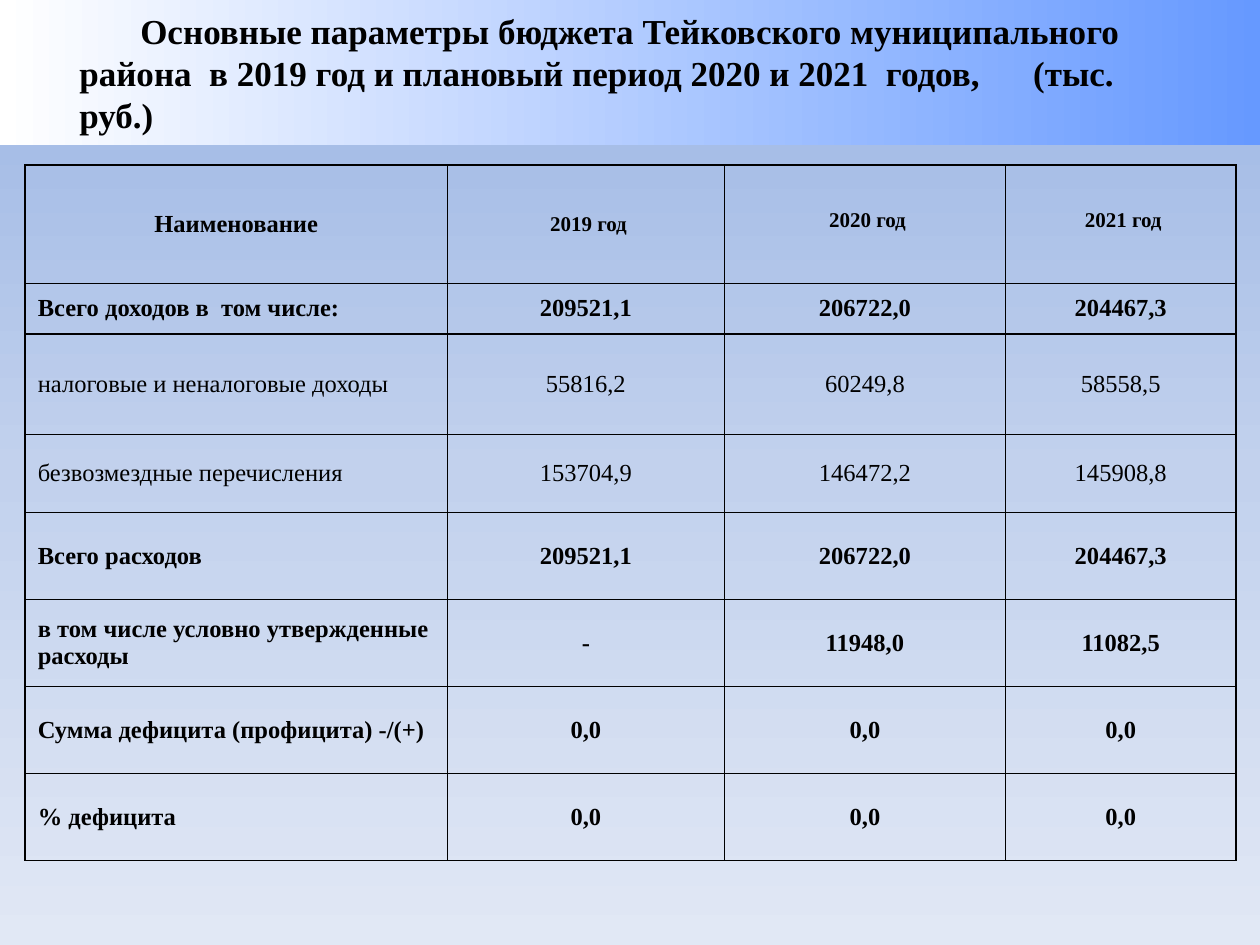
from copy import deepcopy

from lxml.etree import SubElement
from pptx import Presentation
from pptx.dml.color import RGBColor
from pptx.enum.shapes import MSO_SHAPE
from pptx.enum.text import MSO_ANCHOR, PP_ALIGN
from pptx.oxml.ns import qn
from pptx.util import Inches, Pt

BLACK = RGBColor(0x00, 0x00, 0x00)
BACKGROUND_STOPS = [
    (0, RGBColor(0x9A, 0xB5, 0xE4)),
    (50, RGBColor(0xC2, 0xD1, 0xED)),
    (100, RGBColor(0xE1, 0xE8, 0xF5)),
]
BANNER_STOPS = [
    (0, RGBColor(0xFF, 0xFF, 0xFF)),
    (100, RGBColor(0x66, 0x99, 0xFF)),
]
FONT = "Times New Roman"

TITLE_LINES = [
    "Основные параметры бюджета Тейковского муниципального",
    "района  в 2019 год и плановый период 2020 и 2021  годов,\t(тыс. руб.)",
]
# Each row: height, bold, cell texts
ROWS = [
    (0.94, True, ["Наименование", " 2019 год", " 2020 год", " 2021 год"]),
    (0.4, True, ["Всего доходов в  том числе:", "209521,1", "206722,0", "204467,3"]),
    (0.8, False, ["налоговые и неналоговые доходы", "55816,2", "60249,8", "58558,5"]),
    (0.62, False, ["безвозмездные перечисления", "153704,9", "146472,2", "145908,8"]),
    (0.69, True, ["Всего расходов", "209521,1", "206722,0", "204467,3"]),
    (0.69, True, ["в том числе условно утвержденные расходы", "-", "11948,0", "11082,5"]),
    (0.69, True, ["Сумма дефицита (профицита) -/(+)", "0,0", "0,0", "0,0"]),
    (0.69, True, ["% дефицита", "0,0", "0,0", "0,0"]),
]
COLUMN_WIDTHS = [3.35, 2.2, 2.23, 1.83]


def set_gradient(fill, element, stops, angle):
    """Fill with (percent, colour) stops; the angle runs counterclockwise."""
    fill.gradient()
    fill.gradient_angle = angle
    stop_list = next(element.iter(qn("a:gsLst")))
    for old_stop in list(stop_list):
        stop_list.remove(old_stop)
    for percent, color in stops:
        stop = SubElement(stop_list, qn("a:gs"), pos=str(percent * 1000))
        SubElement(stop, qn("a:srgbClr"), val=str(color))


def add_text(paragraph, text, size, bold, alignment):
    paragraph.alignment = alignment
    run = paragraph.add_run()
    run.text = text
    run.font.name = FONT
    run.font.size = Pt(size)
    run.font.bold = bold
    run.font.color.rgb = BLACK


def set_borders(cell):
    properties = cell._tc.get_or_add_tcPr()
    for position, side in enumerate(("lnL", "lnR", "lnT", "lnB")):
        line = SubElement(properties, qn(f"a:{side}"), w=str(Pt(1)))
        fill = SubElement(line, qn("a:solidFill"))
        SubElement(fill, qn("a:srgbClr"), val=str(BLACK))
        properties.insert(position, line)


def add_banner(slide):
    banner = slide.shapes.add_shape(
        MSO_SHAPE.RECTANGLE, 0, 0, Inches(10), Inches(1.15))
    banner.shadow.inherit = False
    banner.line.fill.background()
    set_gradient(banner.fill, banner.element, BANNER_STOPS, 0)

    frame = banner.text_frame
    frame.word_wrap = True
    frame.vertical_anchor = MSO_ANCHOR.MIDDLE
    frame.margin_left = Inches(0.63)
    frame.margin_right = Inches(0.45)
    first, second = frame.paragraphs[0], frame.add_paragraph()
    add_text(first, TITLE_LINES[0], 20, True, PP_ALIGN.CENTER)
    add_text(second, TITLE_LINES[1], 20, True, PP_ALIGN.LEFT)
    # Balance the unequal insets so the first line is centred on the slide
    first._p.get_or_add_pPr().set("marR", str(Inches(0.18)))
    tabs = SubElement(second._p.get_or_add_pPr(), qn("a:tabLst"))
    SubElement(tabs, qn("a:tab"), pos=str(Inches(7.57)), algn="l")


def add_budget_table(slide):
    heights = [height for height, _, _ in ROWS]
    table = slide.shapes.add_table(
        len(ROWS), len(COLUMN_WIDTHS), Inches(0.2), Inches(1.31),
        Inches(sum(COLUMN_WIDTHS)), Inches(sum(heights))).table
    table.first_row = False
    table.horz_banding = False
    for column, width in zip(table.columns, COLUMN_WIDTHS):
        column.width = Inches(width)

    for row_index, (height, bold, texts) in enumerate(ROWS):
        table.rows[row_index].height = Inches(height)
        for column_index, text in enumerate(texts):
            is_header = row_index == 0
            is_label = column_index == 0
            cell = table.cell(row_index, column_index)
            cell.fill.background()
            set_borders(cell)
            cell.vertical_anchor = MSO_ANCHOR.MIDDLE
            if is_header and column_index >= 2:
                cell.vertical_anchor = MSO_ANCHOR.BOTTOM
                cell.margin_bottom = Inches(0.41)
            add_text(
                cell.text_frame.paragraphs[0], text,
                12 if is_header and not is_label else 14, bold,
                PP_ALIGN.LEFT if is_label and not is_header else PP_ALIGN.CENTER)


def main():
    presentation = Presentation()
    presentation.slide_width = Inches(10)
    presentation.slide_height = Inches(7.5)
    slide = presentation.slides.add_slide(presentation.slide_layouts[6])
    set_gradient(slide.background.fill, slide.element, BACKGROUND_STOPS, 270)
    add_banner(slide)
    add_budget_table(slide)
    presentation.save("out.pptx")


if __name__ == "__main__":
    main()
